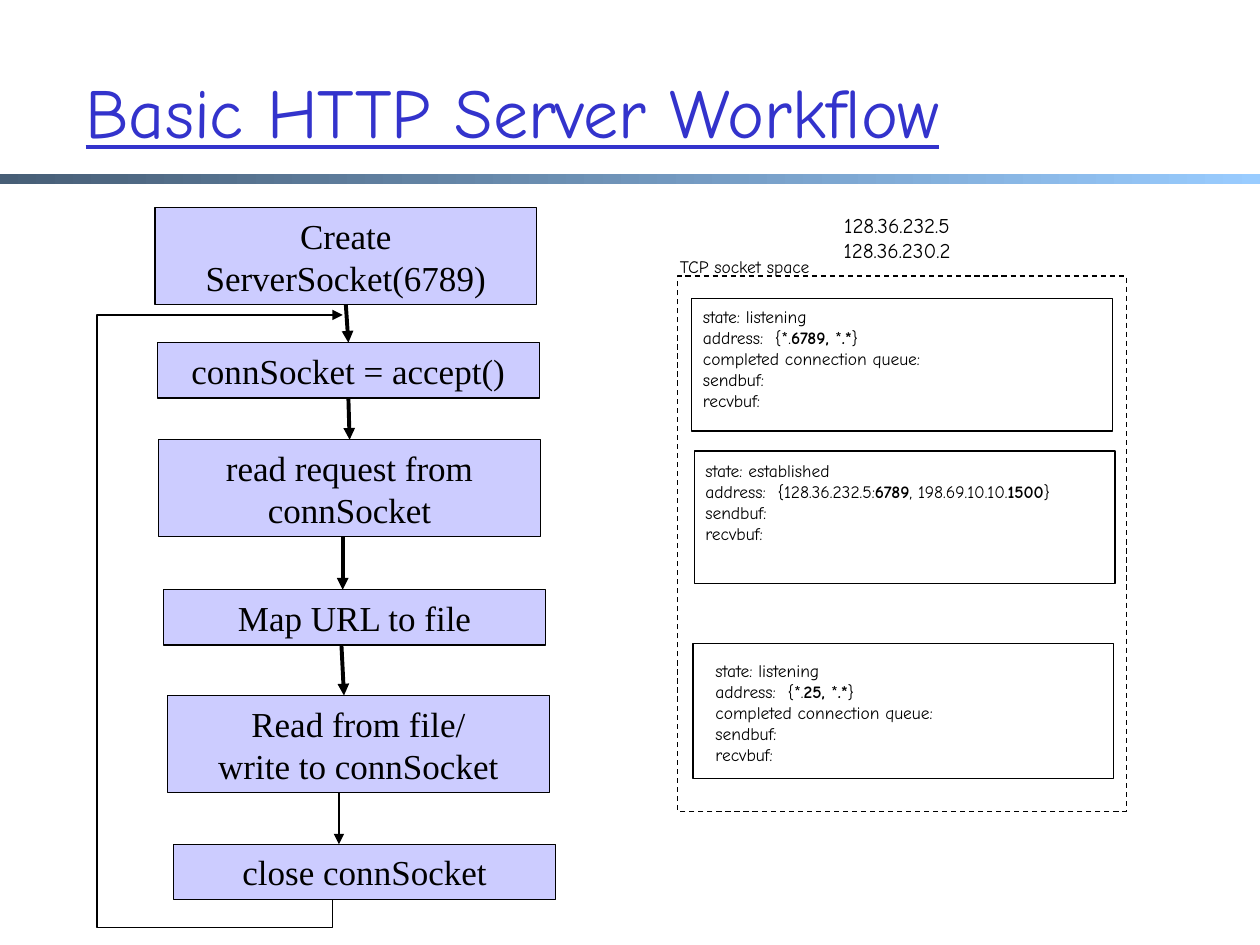
from dataclasses import dataclass

from lxml.etree import SubElement
from pptx import Presentation
from pptx.dml.color import RGBColor
from pptx.enum.dml import MSO_LINE
from pptx.enum.shapes import MSO_CONNECTOR, MSO_SHAPE
from pptx.enum.text import MSO_ANCHOR, PP_ALIGN
from pptx.oxml.ns import qn
from pptx.util import Inches, Pt


@dataclass(frozen=True)
class Theme:
    title: str = "3333CC"
    ink: str = "000000"
    step: str = "CCCCFF"
    bar: tuple = ("475E76", "99CCFF")
    sans: str = "Comic Neue"
    serif: str = "Times New Roman"
    title_size: int = 40
    step_size: int = 20
    address_size: int = 12
    socket_size: int = 10
    thin: float = 0.75


THEME = Theme()
SLIDE_WIDTH, SLIDE_HEIGHT = 10, 7.5
TITLE = "Basic HTTP Server Workflow"

# Text, left, top, number of lines
STEP_WIDTH = 3.03
STEP_HEIGHTS = {1: 0.44, 2: 0.77}
STEPS = [
    ("Create ServerSocket(6789)", 1.23, 1.65, 2),
    ("connSocket = accept()", 1.25, 2.72, 1),
    ("read request from connSocket", 1.26, 3.49, 2),
    ("Map URL to file", 1.3, 4.68, 1),
    ("Read from file/\vwrite to connSocket", 1.33, 5.52, 2),
    ("close connSocket", 1.38, 6.7, 1),
]
# Start x, end x, line width; None joins the middles of the two boxes
ARROWS = [
    (None, None, 2.25),
    (None, None, 2.25),
    (2.72, 2.72, 2.25),
    (2.71, 2.73, 2.25),
    (2.69, 2.69, 1.5),
]
LOOP = [(2.64, 7.14), (2.64, 7.36), (0.77, 7.36), (0.77, 2.5), (2.72, 2.5)]

SPACE = (5.38, 2.19, 3.56, 4.25)
SPACE_LABEL = ("TCP socket space", (5.25, 1.98, 1.32, 0.27))
ADDRESSES = ("128.36.232.5\v128.36.230.2", (6.51, 1.64, 1.22, 0.5))
# Each "|" in a line switches bold on or off
SOCKETS = [
    ((5.49, 2.37, 3.34, 1.05), (5.48, 2.38, 2.09, 0.93), [
        "state: listening",
        "address:  {*.|6789, |*|.*|}",
        "completed connection queue:",
        "sendbuf:",
        "recvbuf:",
    ]),
    ((5.51, 3.58, 3.34, 1.05), (5.5, 3.6, 3.42, 0.77), [
        "state: established",
        "address:  {128.36.232.5:|6789|, 198.69.10.10.|1500|}",
        "sendbuf:",
        "recvbuf:",
    ]),
    ((5.5, 5.11, 3.34, 1.07), (5.58, 5.19, 2.05, 0.93), [
        "state: listening",
        "address:  {*.|25, |*|.*|}",
        "completed connection queue:",
        "sendbuf:",
        "recvbuf:",
    ]),
]


def rgb(value):
    return RGBColor.from_string(value)


def write(shape, lines, *, size, font=THEME.sans, color=THEME.ink,
          align=PP_ALIGN.LEFT, anchor=MSO_ANCHOR.TOP, wrap=False, underline=None):
    frame = shape.text_frame
    frame.word_wrap = wrap
    frame.vertical_anchor = anchor
    for index, line in enumerate(lines):
        paragraph = frame.add_paragraph() if index else frame.paragraphs[0]
        paragraph.alignment = align
        for part, text in enumerate(line.split("|")):
            for row, piece in enumerate(text.split("\v")):
                if row:
                    paragraph.add_line_break()
                run = paragraph.add_run()
                run.text = piece
                run.font.name = font
                run.font.size = Pt(size)
                run.font.color.rgb = rgb(color)
                run.font.underline = underline
                run.font.bold = part % 2 == 1


def add_text(slide, lines, box, **text_format):
    write(slide.shapes.add_textbox(*map(Inches, box)), lines, **text_format)


def draw_line(shape, width=THEME.thin):
    shape.line.color.rgb = rgb(THEME.ink)
    shape.line.width = Pt(width)


def add_box(slide, box, fill=None):
    shape = slide.shapes.add_shape(MSO_SHAPE.RECTANGLE, *map(Inches, box))
    shape.shadow.inherit = False
    if fill:
        shape.fill.solid()
        shape.fill.fore_color.rgb = rgb(fill)
    else:
        shape.fill.background()
    draw_line(shape)
    return shape


def add_arrowhead(shape):
    SubElement(shape.line._get_or_add_ln(), qn("a:tailEnd"), type="triangle")


def add_title(slide):
    title = slide.shapes.title
    title.left, title.top, title.width, title.height = map(
        Inches, (0.58, 0.25, 8.5, 1.25))
    write(title, [TITLE], size=THEME.title_size, color=THEME.title,
          anchor=MSO_ANCHOR.MIDDLE, wrap=True, underline=True)


def add_bar(slide):
    bar = add_box(slide, (0, 1.38, SLIDE_WIDTH, 0.08))
    bar.line.fill.background()
    bar.fill.gradient()
    bar.fill.gradient_angle = 0
    for stop, color in zip(bar.fill.gradient_stops, THEME.bar):
        stop.color.rgb = rgb(color)


def add_step(slide, text, left, top, line_count):
    box = (left, top, STEP_WIDTH, STEP_HEIGHTS[line_count])
    shape = add_box(slide, box, THEME.step)
    write(shape, [text], size=THEME.step_size, font=THEME.serif,
          align=PP_ALIGN.CENTER, anchor=MSO_ANCHOR.MIDDLE, wrap=True)
    return shape


def add_arrow(slide, upper, lower, start_x, end_x, width):
    arrow = slide.shapes.add_connector(
        MSO_CONNECTOR.STRAIGHT, Inches(start_x or 0), upper.top + upper.height,
        Inches(end_x or 0), lower.top)
    if start_x is None:
        arrow.begin_connect(upper, 2)
        arrow.end_connect(lower, 0)
    draw_line(arrow, width)
    add_arrowhead(arrow)
    SubElement(arrow._element.spPr, qn("a:effectLst"))


def add_loop(slide):
    start, *corners = [(Inches(x), Inches(y)) for x, y in LOOP]
    builder = slide.shapes.build_freeform(*start)
    builder.add_line_segments(corners, close=False)
    loop = builder.convert_to_shape()
    loop.shadow.inherit = False
    loop.fill.background()
    draw_line(loop)
    add_arrowhead(loop)


def add_workflow(slide):
    add_loop(slide)
    steps = [add_step(slide, *step) for step in STEPS]
    for upper, lower, arrow in zip(steps, steps[1:], ARROWS):
        add_arrow(slide, upper, lower, *arrow)


def add_socket_space(slide):
    add_box(slide, SPACE).line.dash_style = MSO_LINE.DASH
    for (text, box), size in ((SPACE_LABEL, THEME.socket_size),
                              (ADDRESSES, THEME.address_size)):
        add_text(slide, [text], box, size=size, align=PP_ALIGN.CENTER)
    for box, text_box, lines in SOCKETS:
        add_box(slide, box)
        add_text(slide, lines, text_box, size=THEME.socket_size)


def main():
    presentation = Presentation()
    presentation.slide_width = Inches(SLIDE_WIDTH)
    presentation.slide_height = Inches(SLIDE_HEIGHT)
    slide = presentation.slides.add_slide(presentation.slide_layouts[5])
    add_bar(slide)
    add_title(slide)
    add_socket_space(slide)
    add_workflow(slide)
    presentation.save("out.pptx")


if __name__ == "__main__":
    main()
